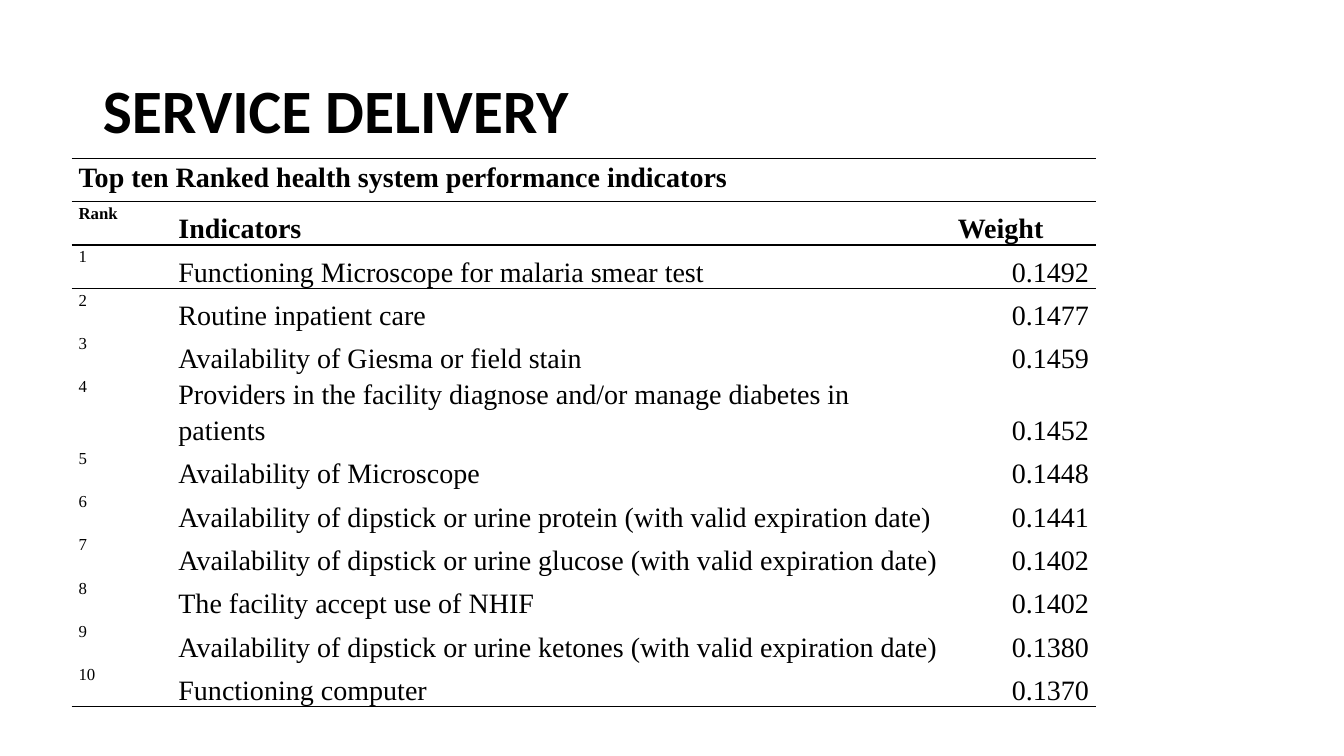
from lxml.etree import SubElement
from pptx import Presentation
from pptx.dml.color import RGBColor as Rgb
from pptx.enum.text import MSO_ANCHOR as Anchor, PP_ALIGN as Align
from pptx.oxml.ns import qn
from pptx.util import Inches, Pt

COLORS = {"ink": "000000"}
NO_STYLE = "{2D5ABB26-0587-4C30-8999-92F81FD0307C}"
CAPTION = "Top ten Ranked health system performance indicators"
HEADINGS = ("Rank", "Indicators", "Weight")
INDICATORS = [
    ("Functioning Microscope for malaria smear test", "0.1492"),
    ("Routine inpatient care", "0.1477"),
    ("Availability of Giesma or field stain", "0.1459"),
    ("Providers in the facility diagnose and/or manage diabetes in patients", "0.1452"),
    ("Availability of Microscope", "0.1448"),
    ("Availability of dipstick or urine protein (with valid expiration date)", "0.1441"),
    ("Availability of dipstick or urine glucose (with valid expiration date)", "0.1402"),
    ("The facility accept use of NHIF", "0.1402"),
    ("Availability of dipstick or urine ketones (with valid expiration date)", "0.1380"),
    ("Functioning computer", "0.1370"),
]
COLUMN_WIDTHS = (0.99, 7.73, 1.44)
ROW_HEIGHT = 0.43


class SlideBuilder:
    title_font = "Calibri"
    table_font = "Times New Roman"

    def __init__(self, deck):
        self.page = deck.slides.add_slide(deck.slide_layouts[5])

    def add_text(self, para, text, font, size, bold, spacing, align=Align.LEFT):
        para.alignment = align
        para.line_spacing = spacing
        span = para.add_run()
        span.text = text
        span.font.name = font
        span.font.size = Pt(size)
        span.font.bold = bold
        span.font.color.rgb = Rgb.from_string(COLORS["ink"])

    def title(self, text, left, top, width, height):
        box = self.page.shapes.title
        box.left, box.top = Inches(left), Inches(top)
        box.width, box.height = Inches(width), Inches(height)
        box.text_frame.vertical_anchor = Anchor.MIDDLE
        self.add_text(box.text_frame.paragraphs[0], text, self.title_font, 44, True, 0.9)

    def table(self, left, top, widths, row_height, row_count):
        frame = self.page.shapes.add_table(
            row_count, len(widths), Inches(left), Inches(top),
            Inches(sum(widths)), Inches(row_height * row_count))
        table = frame.table
        table.first_row = table.horz_banding = False
        table._tbl.tblPr.find(qn("a:tableStyleId")).text = NO_STYLE
        for column, width in zip(table.columns, widths):
            column.width = Inches(width)
        for row in table.rows:
            row.height = Inches(row_height)
        return table

    def cell(self, cell, text="", size=20, bold=False, anchor=Anchor.BOTTOM,
             align=Align.LEFT, edges=()):
        cell.margin_left = cell.margin_right = Inches(0.07)
        cell.margin_top = cell.margin_bottom = 0
        cell.vertical_anchor = anchor
        for edge in edges:
            self.border(cell, edge)
        cell.fill.background()
        if text:
            self.add_text(cell.text_frame.paragraphs[0], text, self.table_font,
                          size, bold, 1.15, align)

    def border(self, cell, edge):
        line = SubElement(cell._tc.get_or_add_tcPr(), qn(f"a:{edge}"), w=str(Pt(1)))
        fill = SubElement(line, qn("a:solidFill"))
        SubElement(fill, qn("a:srgbClr"), val=COLORS["ink"])


def main():
    deck = Presentation()
    deck.slide_width, deck.slide_height = Inches(13.33), Inches(7.5)
    builder = SlideBuilder(deck)
    builder.title("SERVICE DELIVERY", 0.92, 0.4, 11.5, 1.45)

    ranked = [(str(rank), *entry) for rank, entry in enumerate(INDICATORS, 1)]
    rows = [(CAPTION, "", ""), HEADINGS, *ranked]
    table = builder.table(0.71, 1.57, COLUMN_WIDTHS, ROW_HEIGHT, len(rows))
    table.cell(0, 0).merge(table.cell(0, 2))
    edges = {0: ("lnT", "lnB"), 1: ("lnT", "lnB"), 2: ("lnT",), len(rows) - 1: ("lnB",)}
    for y, row in enumerate(rows):
        for x, text in enumerate(row):
            builder.cell(
                table.cell(y, x), text,
                size=12 if x == 0 and y > 0 else 20,
                bold=y < 2,
                anchor=Anchor.TOP if x == 0 else Anchor.BOTTOM,
                align=Align.RIGHT if x == 2 and y > 1 else Align.LEFT,
                edges=edges.get(y, ()))
    deck.save("out.pptx")


if __name__ == "__main__":
    main()
